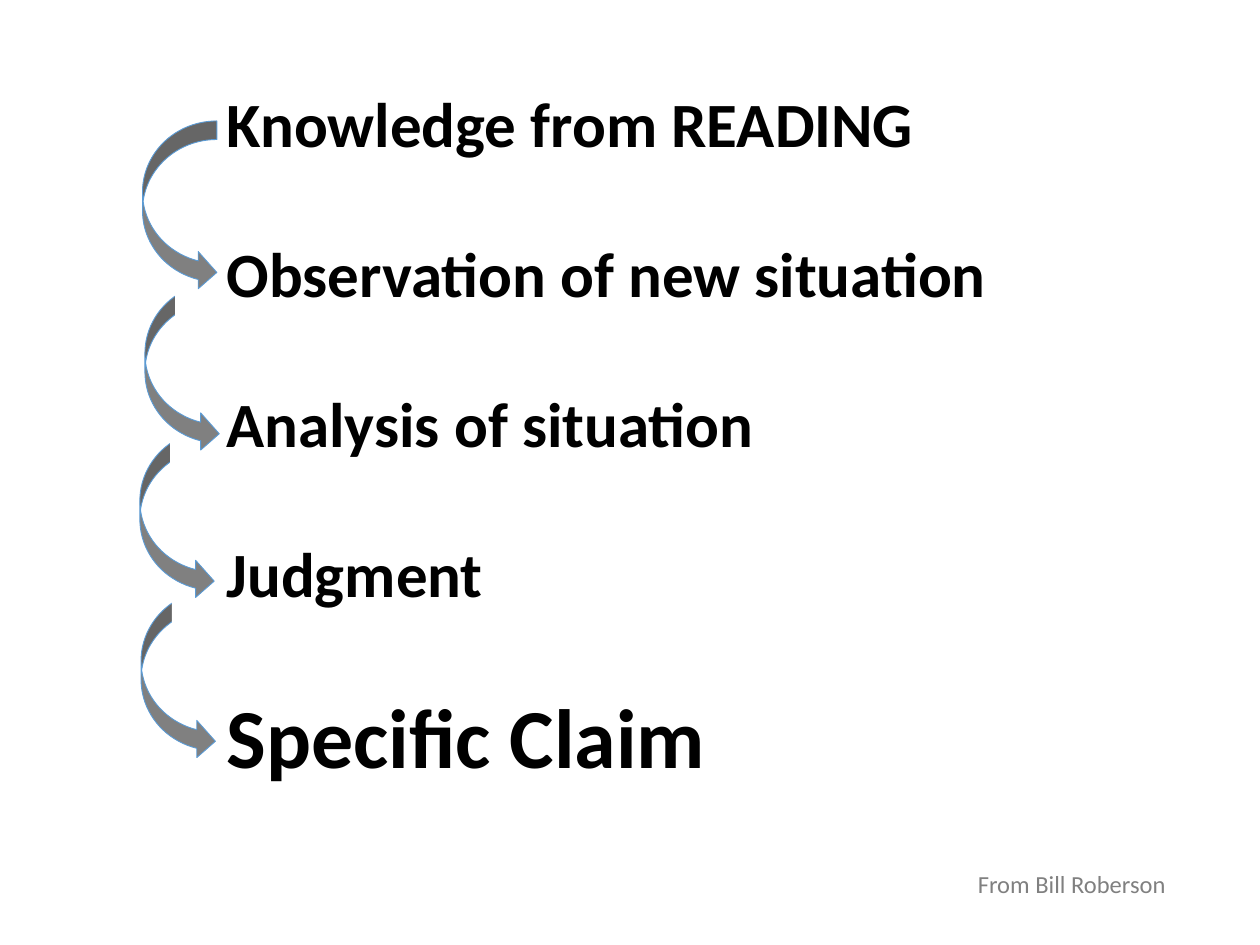
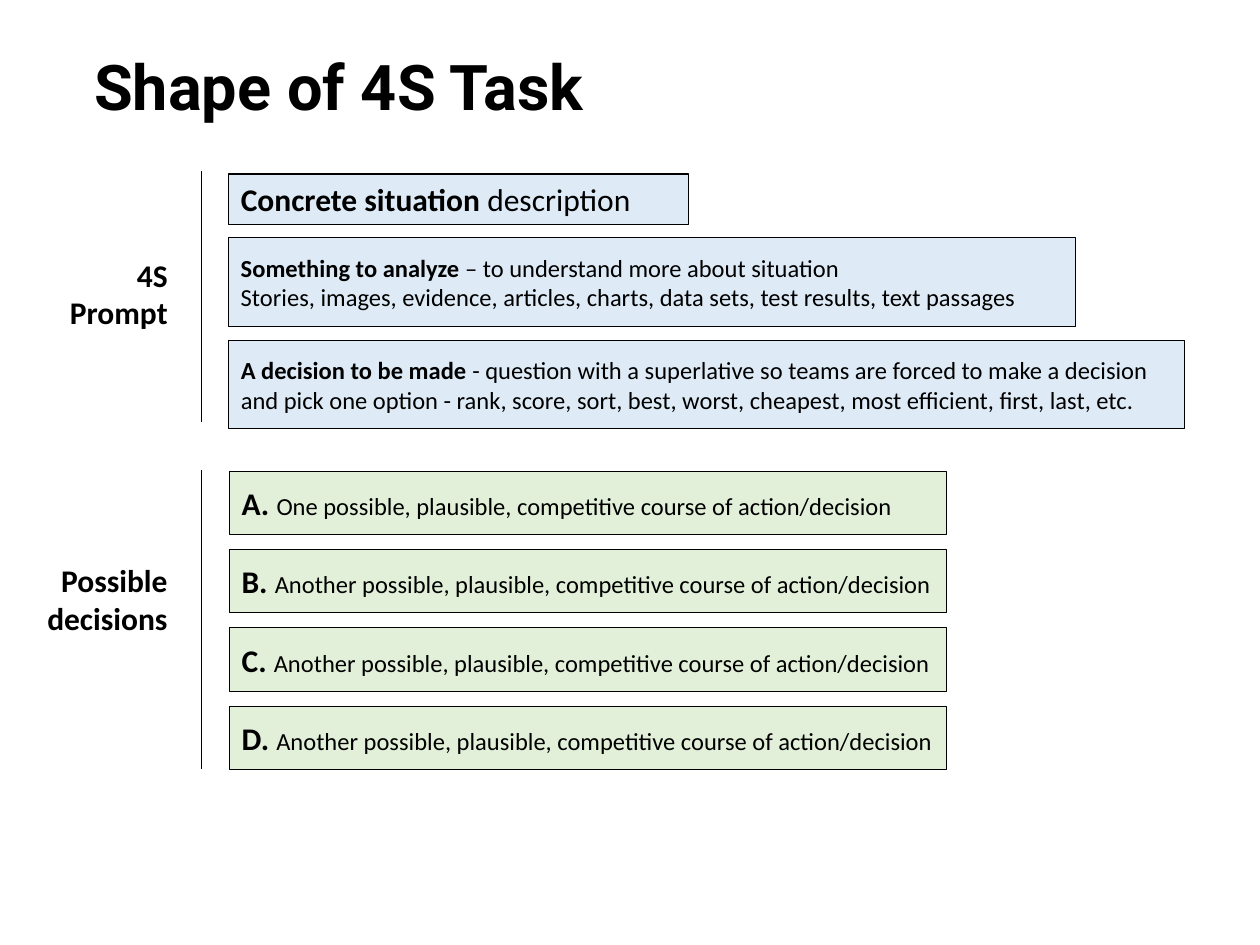
from dataclasses import dataclass

from lxml.etree import SubElement
from pptx import Presentation
from pptx.dml.color import RGBColor
from pptx.enum.shapes import MSO_CONNECTOR, MSO_SHAPE
from pptx.enum.text import MSO_ANCHOR as Anchor, PP_ALIGN as Align
from pptx.oxml.ns import qn
from pptx.shapes.autoshape import Shape
from pptx.slide import Slide
from pptx.util import Pt

BLACK = RGBColor(0x00, 0x00, 0x00)
WHITE = RGBColor(0xFF, 0xFF, 0xFF)
GRAY = RGBColor(0x80, 0x80, 0x80)
ARROW_EDGE = RGBColor(0x5B, 0x9B, 0xD5)
PROMPT_BLUE = RGBColor(0xDE, 0xEB, 0xF7)
DECISION_GREEN = RGBColor(0xE2, 0xF0, 0xD9)
BODY_FONT = "Calibri"
TITLE_FONT = "Roboto"


@dataclass(frozen=True)
class Area:
    left: float
    top: float
    width: float
    height: float


@dataclass(frozen=True)
class Span:
    text: str
    size: float
    bold: bool = False
    color: RGBColor = BLACK
    font: str = BODY_FONT


@dataclass(frozen=True)
class PromptBox:
    area: Area
    paras: list[list[Span]]
    line_width: float = 0.5


@dataclass(frozen=True)
class Section:
    paras: list[list[Span]]
    label_top: float
    line_top: float
    line_bottom: float


STEPS = [
    Span("Knowledge from READING", 36, True),
    Span("Observation of new situation", 36, True),
    Span("Analysis of situation", 36, True),
    Span("Judgment", 36, True),
    Span("Specific Claim", 48, True),
]
STEP_GAP = 42.5
ARROW_CORNERS = [(81.4, 69.1), (82.8, 161.3), (79.9, 245.5), (80.6, 337)]

PROMPT_LEFT = 130.5
PROMPT_BOXES = [
    PromptBox(Area(PROMPT_LEFT, 99.5, 262.8, 28.8),
              [[Span("Concrete situation ", 18, True), Span("description", 18)]], 0.75),
    PromptBox(Area(PROMPT_LEFT, 135.8, 484, 50.6), [
        [Span("Something to analyze ", 14, True),
         Span("– to understand more about situation", 14)],
        [Span("Stories, images, evidence, articles, charts, data sets, "
              "test results, text passages", 14)],
    ]),
    PromptBox(Area(PROMPT_LEFT, 194.5, 546.5, 50.6), [
        [Span("A decision to be made ", 14, True),
         Span("- question with a superlative so teams are forced to make a decision "
              "and pick one option - rank, score, sort, best, worst, cheapest, "
              "most efficient, first, last, etc.", 14)],
    ]),
]
DECISIONS = ["One"] + ["Another"] * 3
DECISION_TOP, DECISION_PITCH = 269.3, 44.7
SECTIONS = [
    Section([[Span("4S", 18, True)], [Span("Prompt", 18, True)]], 142.5, 98, 241),
    Section([[Span("Possible decisions", 18, True)]], 317, 268.5, 439.3),
]
SECTION_LINE_X = 115.2


def write(shape: Shape, paras: list[list[Span]], align: Align = Align.LEFT,
          anchor: Anchor = Anchor.TOP, gap: float = 0) -> None:
    """Fill a shape with paragraphs, leaving a gap after each one."""
    frame = shape.text_frame
    frame.word_wrap = True
    frame.vertical_anchor = anchor
    for index, spans in enumerate(paras):
        para = frame.add_paragraph() if index else frame.paragraphs[0]
        para.alignment = align
        para.space_after = Pt(gap)
        for span in spans:
            run = para.add_run()
            run.text = span.text
            run.font.size = Pt(span.size)
            run.font.bold = span.bold
            run.font.name = span.font
            run.font.color.rgb = span.color


def add_text(page: Slide, area: Area, paras: list[list[Span]],
             align: Align = Align.LEFT, gap: float = 0) -> None:
    box = page.shapes.add_textbox(Pt(area.left), Pt(area.top), Pt(area.width), Pt(area.height))
    write(box, paras, align, gap=gap)


def add_filled(page: Slide, kind: MSO_SHAPE, area: Area, fill: RGBColor,
               line: RGBColor, line_width: float = 0.5) -> Shape:
    shape = page.shapes.add_shape(
        kind, Pt(area.left), Pt(area.top), Pt(area.width), Pt(area.height))
    shape.shadow.inherit = False
    shape.fill.solid()
    shape.fill.fore_color.rgb = fill
    shape.line.color.rgb = line
    shape.line.width = Pt(line_width)
    return shape


def add_text_block(page: Slide, area: Area, fill: RGBColor,
                   paras: list[list[Span]], line_width: float = 0.5) -> None:
    block = add_filled(page, MSO_SHAPE.RECTANGLE, area, fill, BLACK, line_width)
    write(block, paras, anchor=Anchor.MIDDLE)


def add_step_arrow(page: Slide, left: float, top: float, shortened: bool) -> None:
    """Draw a curved arrow; a white block hides the tail of a shortened one."""
    add_filled(page, MSO_SHAPE.CURVED_RIGHT_ARROW, Area(left, top, 42.5, 97.2),
               GRAY, ARROW_EDGE)
    if shortened:
        add_filled(page, MSO_SHAPE.RECTANGLE, Area(left + 17.7, top - 8.6, 26.6, 36.7),
                   WHITE, WHITE)


def add_section(page: Slide, section: Section) -> None:
    """Draw a vertical rule with its label on the left."""
    rule = page.shapes.add_connector(
        MSO_CONNECTOR.STRAIGHT, Pt(SECTION_LINE_X), Pt(section.line_bottom),
        Pt(SECTION_LINE_X), Pt(section.line_top))
    rule.line.color.rgb = BLACK
    rule.line.width = Pt(1)
    SubElement(rule._element.spPr, qn("a:effectLst"))
    add_text(page, Area(16.5, section.label_top, 86.4, 51), section.paras, Align.RIGHT)


def build_steps_page(page: Slide) -> None:
    first, *later = ARROW_CORNERS
    for left, top in reversed(later):
        add_step_arrow(page, left, top, shortened=True)
    add_text(page, Area(122.4, 45, 521.3, 414.7), [[step] for step in STEPS], gap=STEP_GAP)
    add_step_arrow(page, *first, shortened=False)
    add_text(page, Area(499, 493.2, 174.2, 24.5),
             [[Span("From Bill Roberson", 14, color=GRAY)]], Align.RIGHT)


def build_task_page(page: Slide) -> None:
    add_text(page, Area(46.8, 23.8, 303, 51),
             [[Span("Shape of 4S Task", 36, True, font=TITLE_FONT)]])
    for prompt in PROMPT_BOXES:
        add_text_block(page, prompt.area, PROMPT_BLUE, prompt.paras, prompt.line_width)
    for index, (letter, opening) in enumerate(zip("ABCD", DECISIONS)):
        area = Area(131, DECISION_TOP + index * DECISION_PITCH, 409.7, 36.2)
        wording = f"{opening} possible, plausible, competitive course of action/decision"
        add_text_block(page, area, DECISION_GREEN,
                       [[Span(f"{letter}. ", 18, True), Span(wording, 14)]])
    for section in SECTIONS:
        add_section(page, section)


def main() -> None:
    deck = Presentation()
    deck.slide_width, deck.slide_height = Pt(720), Pt(540)
    blank = deck.slide_layouts[6]
    for build in (build_steps_page, build_task_page):
        build(deck.slides.add_slide(blank))
    deck.save("out.pptx")


if __name__ == "__main__":
    main()
